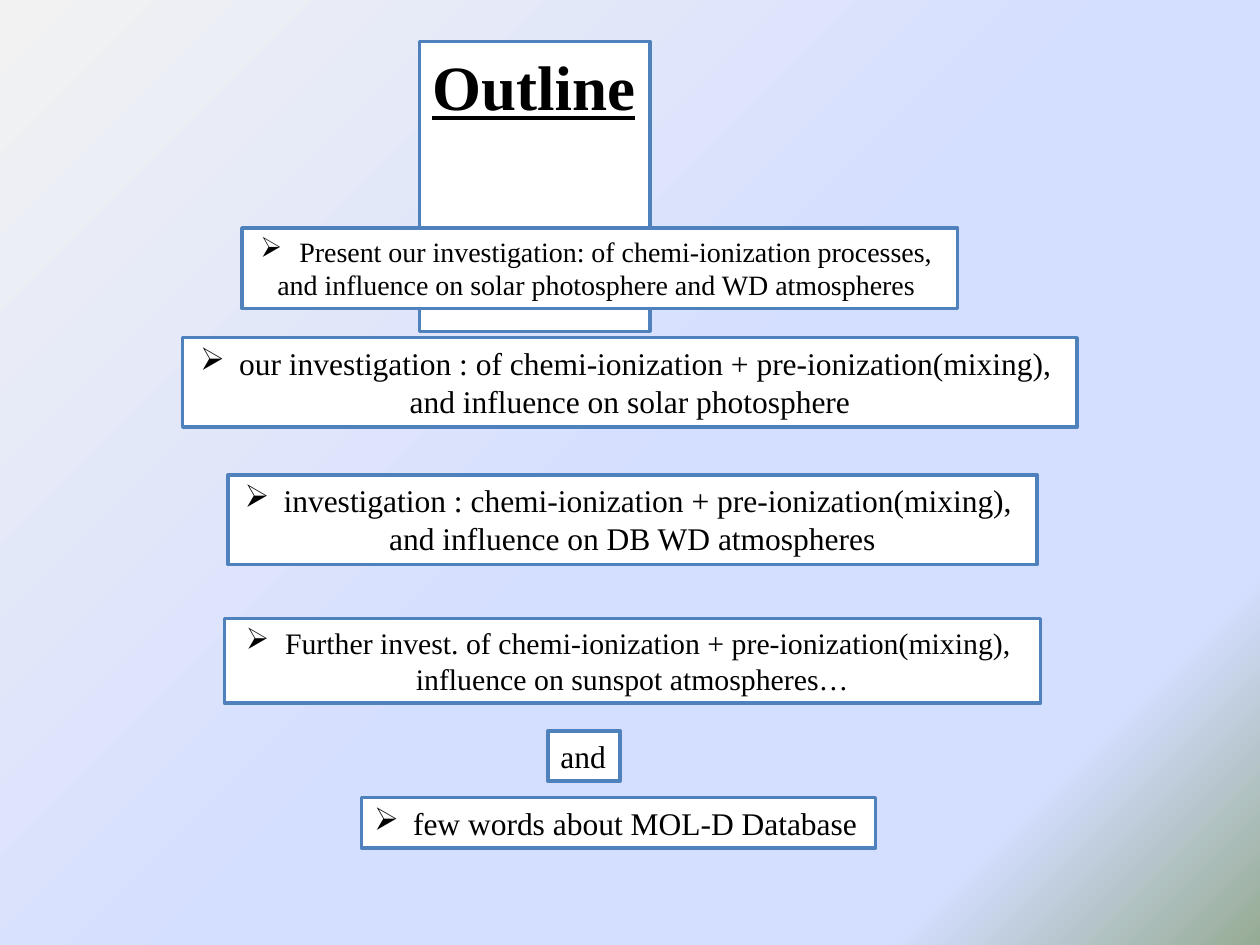
from dataclasses import dataclass

from lxml.etree import SubElement
from pptx import Presentation
from pptx.dml.color import RGBColor
from pptx.enum.text import MSO_ANCHOR, MSO_AUTO_SIZE, PP_ALIGN
from pptx.oxml.ns import qn
from pptx.util import Emu, Pt

PX = 9144  # EMU per px, at 100 px to the inch


@dataclass(frozen=True)
class Theme:
    font: str = "Times New Roman"
    text: str = "000000"
    box: str = "FFFFFF"
    border: str = "4F81BD"
    border_pt: int = 2
    title_pt: int = 36
    body_pt: int = 18
    further_pt: int = 17
    present_pt: int = 16
    indent: int = 31
    bullet: str = "➢"
    angle: int = 45
    gradient: tuple = ((0, "F2F2F2"), (53, "D4DEFF"),
                       (83, "D4DEFF"), (100, "96AB94"))


THEME = Theme()


@dataclass(frozen=True)
class Box:
    rect: tuple
    lines: tuple
    size: int = THEME.body_pt
    align: PP_ALIGN = PP_ALIGN.CENTER
    bulleted: bool = True
    wrap: bool = False


TITLE = Box((333, 33, 183, 71), ("Outline",), THEME.title_pt,
            PP_ALIGN.LEFT, bulleted=False)
TOPICS = (
    Box((192, 181, 568, 64),
        ("Present our investigation: of chemi-ionization processes, ",
         "and influence on solar photosphere and WD atmospheres "),
        THEME.present_pt),
    Box((145, 268, 710, 71),
        ("our investigation : of chemi-ionization + pre-ionization(mixing), ",
         "and influence on solar photosphere")),
    Box((181, 377, 642, 71),
        ("investigation : chemi-ionization + pre-ionization(mixing), ",
         "and influence on DB WD atmospheres")),
    Box((178, 491, 648, 67),
        ("Further invest. of chemi-ionization + pre-ionization(mixing), ",
         "influence on sunspot atmospheres…"),
        THEME.further_pt, wrap=True),
    Box((435, 580, 57, 40), ("and",), align=PP_ALIGN.LEFT, bulleted=False),
    Box((287, 633, 408, 40), ("few words about MOL-D Database",),
        align=PP_ALIGN.LEFT),
)


def set_attrs(target, values: dict) -> None:
    for name, value in values.items():
        setattr(target, name, value)


def paint_background(slide) -> None:
    fill = slide.background.fill
    fill.gradient()
    grad = slide.background._cSld.find(".//" + qn("a:gradFill"))
    for child in list(grad):
        grad.remove(child)
    stops = SubElement(grad, qn("a:gsLst"))
    for pos, color in THEME.gradient:
        gs = SubElement(stops, qn("a:gs"), pos=str(pos * 1000))
        SubElement(gs, qn("a:srgbClr"), val=color)
    SubElement(grad, qn("a:lin"), ang=str(THEME.angle * 60000), scaled="0")


def add_bullet(p) -> None:
    pPr = p._p.get_or_add_pPr()
    pPr.set("marL", str(THEME.indent * PX))
    pPr.set("indent", str(-THEME.indent * PX))
    SubElement(pPr, qn("a:buChar"), char=THEME.bullet)


def fill_box(sp, box: Box, **font_format) -> None:
    """Give a text box or placeholder its place, frame and text."""
    names = ("left", "top", "width", "height")
    set_attrs(sp, {n: Emu(v * PX) for n, v in zip(names, box.rect)})
    sp.fill.solid()
    sp.fill.fore_color.rgb = RGBColor.from_string(THEME.box)
    sp.line.color.rgb = RGBColor.from_string(THEME.border)
    sp.line.width = Pt(THEME.border_pt)
    tf = sp.text_frame
    set_attrs(tf, {"word_wrap": box.wrap, "vertical_anchor": MSO_ANCHOR.TOP,
                   "auto_size": MSO_AUTO_SIZE.SHAPE_TO_FIT_TEXT})
    for i, line in enumerate(box.lines):
        p = tf.add_paragraph() if i else tf.paragraphs[0]
        p.alignment = box.align
        if box.bulleted and i == 0:
            add_bullet(p)
        r = p.add_run()
        r.text = line
        set_attrs(r.font, {"name": THEME.font, "size": Pt(box.size),
                           **font_format})
        r.font.color.rgb = RGBColor.from_string(THEME.text)


def main() -> None:
    prs = Presentation()
    set_attrs(prs, {"slide_width": Emu(1000 * PX),
                    "slide_height": Emu(750 * PX)})
    s = prs.slides.add_slide(prs.slide_layouts.get_by_name("Title Only"))
    paint_background(s)
    fill_box(s.shapes.title, TITLE, bold=True, underline=True)
    for topic in TOPICS:
        fill_box(s.shapes.add_textbox(0, 0, 0, 0), topic)
    prs.save("out.pptx")


if __name__ == "__main__":
    main()
